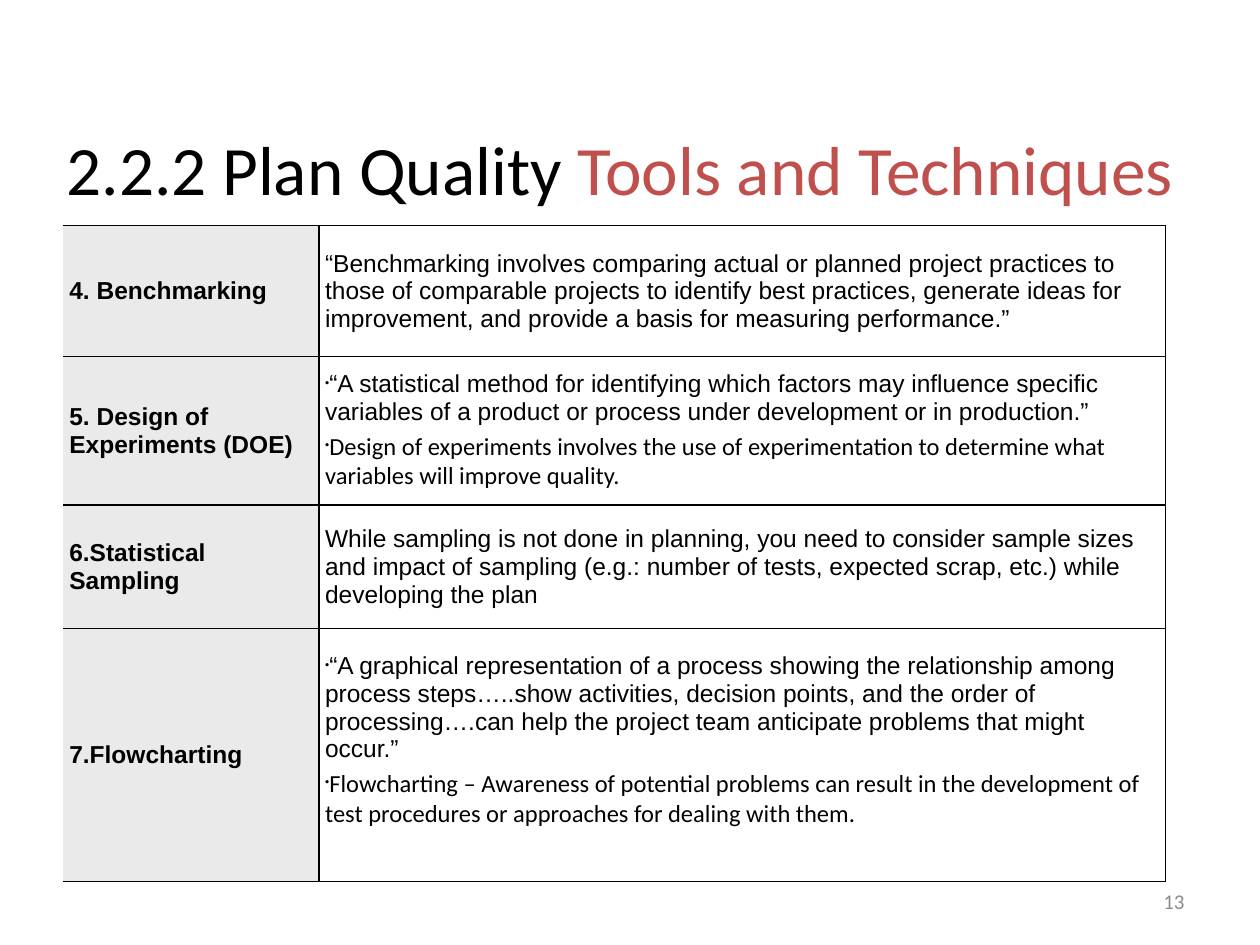
from lxml import etree
from pptx import Presentation
from pptx import util as u
from pptx.dml.color import RGBColor
from pptx.enum import text
from pptx.oxml import ns

BLACK = RGBColor(0x00, 0x00, 0x00)
RED = RGBColor(0xC0, 0x50, 0x4D)
GREY = RGBColor(0x8C, 0x8C, 0x8C)
LABEL_FILL = RGBColor(0xEA, 0xEA, 0xEA)
MIDDLE = text.MSO_ANCHOR.MIDDLE

# Each technique: row height in percent, label, (font, paragraph) pairs
TECHNIQUES = [
    (13.87, "4. Benchmarking", [
        ("Arial", "“Benchmarking involves comparing actual or planned project practices to those of "
                  "comparable projects to identify best practices, generate ideas for improvement, "
                  "and provide a basis for measuring performance.”")]),
    (15.73, "5. Design of Experiments (DOE)", [
        ("Arial", "“A statistical method for identifying which factors may influence specific "
                  "variables of a product or process under development or in production.”"),
        ("Calibri", "Design of experiments involves the use of experimentation to determine "
                    "what variables will improve quality.")]),
    (13.07, "6.Statistical Sampling", [
        ("Arial", "While sampling is not done in planning, you need to consider sample sizes and "
                  "impact of sampling (e.g.: number of tests, expected scrap, etc.) while "
                  "developing the plan")]),
    (26.75, "7.Flowcharting", [
        ("Arial", "“A graphical representation of a process showing the relationship among process "
                  "steps…..show activities, decision points, and the order of processing….can help "
                  "the project team anticipate problems that might occur.”"),
        ("Calibri", "Flowcharting – Awareness of potential problems can result in the development "
                    "of test procedures or approaches for dealing with them.")]),
]


def apply(target, values):
    for name, value in values.items():
        setattr(target, name, value)


class Deck:
    """Holds the style and the current slide; lengths are percent of the slide."""

    def __init__(self):
        self.prs = Presentation()
        apply(self.prs, {"slide_width": u.Inches(10), "slide_height": u.Inches(7.5)})
        self.slide = self.prs.slides.add_slide(self.prs.slide_layouts[6])

    def x(self, share):
        return round(self.prs.slide_width * share / 100)

    def y(self, share):
        return round(self.prs.slide_height * share / 100)

    def box(self, left, top, width, height):
        return self.x(left), self.y(top), self.x(width), self.y(height)

    def run(self, paragraph, words, size, font="Calibri", color=BLACK, bold=False):
        run = paragraph.add_run()
        run.text = words
        apply(run.font, {"size": u.Pt(size), "name": font, "bold": bold})
        run.font.color.rgb = color

    def label(self, place, align, runs):
        frame = self.slide.shapes.add_textbox(*self.box(*place)).text_frame
        apply(frame, {"word_wrap": True, "vertical_anchor": MIDDLE})
        frame.paragraphs[0].alignment = align
        for words, size, color in runs:
            self.run(frame.paragraphs[0], words, size, color=color)

    def border(self, cell, sides):
        """Add lines to a cell; sides maps L, R, T, B to a width in points."""
        props = cell._tc.get_or_add_tcPr()
        for index, side in enumerate("LRTB"):
            width = sides.get(side, 0)
            line = etree.Element(ns.qn(f"a:ln{side}"), w=str(u.Pt(width)))
            if width:
                fill = etree.SubElement(line, ns.qn("a:solidFill"))
                etree.SubElement(fill, ns.qn("a:srgbClr"), val=str(BLACK))
            else:
                etree.SubElement(line, ns.qn("a:noFill"))
            props.insert(index, line)

    def bullet(self, paragraph):
        props = paragraph._p.get_or_add_pPr()
        apply(paragraph, {"level": 0})
        for name in ("marL", "indent"):
            props.set(name, "0")
        etree.SubElement(props, ns.qn("a:buSzPct"), val="50000")
        etree.SubElement(props, ns.qn("a:buChar"), char="•")

    def cell(self, cell, paragraphs, sides, bold=False):
        margin = u.Inches(0.05)
        apply(cell, {"vertical_anchor": MIDDLE, "margin_left": margin, "margin_right": margin,
                     "margin_top": margin, "margin_bottom": margin})
        if bold:
            cell.fill.solid()
            cell.fill.fore_color.rgb = LABEL_FILL
        else:
            cell.fill.background()
        self.border(cell, sides)
        frame = cell.text_frame
        for index, (font, words) in enumerate(paragraphs):
            paragraph = frame.add_paragraph() if index else frame.paragraphs[0]
            paragraph.space_before = u.Pt(3.5)
            if len(paragraphs) > 1:
                self.bullet(paragraph)
            self.run(paragraph, words, 14, font, bold=bold)

    def table(self, left, top, widths, techniques):
        heights = [technique[0] for technique in techniques]
        place = self.box(left, top, sum(widths), sum(heights))
        table = self.slide.shapes.add_table(len(heights), len(widths), *place).table
        apply(table, {"first_row": False, "horz_banding": False})
        for column, width in zip(table.columns, widths):
            column.width = self.x(width)
        for index, (height, name, description) in enumerate(techniques):
            table.rows[index].height = self.y(height)
            edges = {"T": 1 if index else 0.5, "B": 1}
            self.cell(table.cell(index, 0), [("Arial", name)], {**edges, "R": 1}, bold=True)
            self.cell(table.cell(index, 1), description, {**edges, "L": 1, "R": 0.5})
        return table


def main():
    deck = Deck()
    # Slide number
    deck.label((71.7, 92.67, 23.3, 5.33), text.PP_ALIGN.RIGHT, [("13", 12, GREY)])
    # Title
    deck.label((1.7, 14.4, 95, 6.67), text.PP_ALIGN.CENTER,
               [("2.2.2 Plan Quality ", 39.6, BLACK), ("Tools and Techniques", 39.6, RED)])
    # Techniques, with the last description raised a little
    techniques = deck.table(5, 23.87, (20.3, 67.2), TECHNIQUES)
    techniques.cell(len(TECHNIQUES) - 1, 1).margin_bottom = u.Inches(0.28)
    deck.prs.save("out.pptx")


if __name__ == "__main__":
    main()
